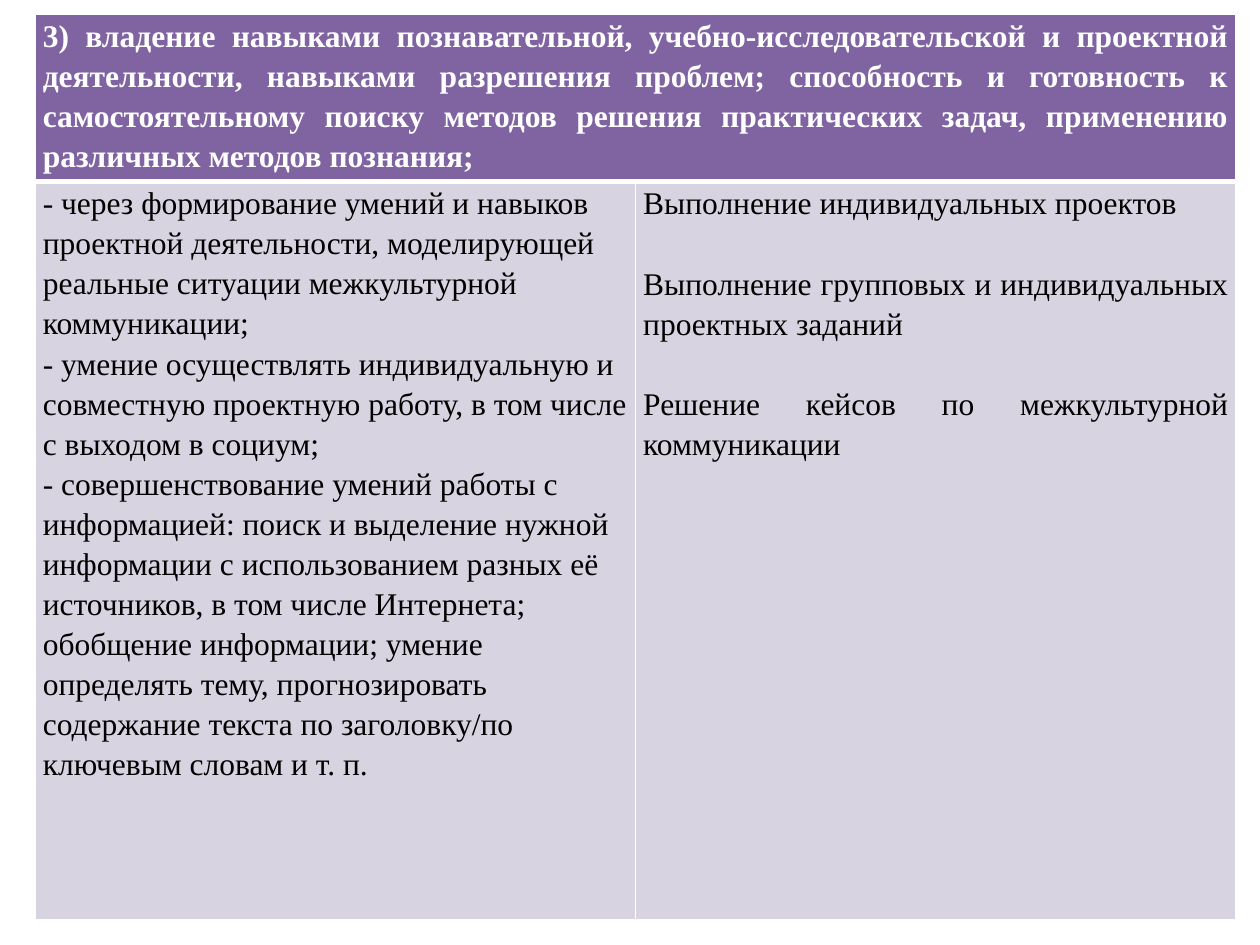
from lxml.etree import SubElement
from pptx import Presentation
from pptx.dml.color import RGBColor
from pptx.enum.text import PP_ALIGN
from pptx.oxml.ns import qn
from pptx.util import Inches, Pt

# Content
HEADER = [
    "3) владение навыками познавательной, учебно-исследовательской и проектной деятельности, "
    "навыками разрешения проблем; способность и готовность к самостоятельному поиску методов "
    "решения практических задач, применению различных методов познания;",
]
SKILLS = [
    "- через формирование умений и навыков проектной деятельности, моделирующей реальные "
    "ситуации межкультурной коммуникации;",
    "- умение осуществлять индивидуальную и совместную проектную работу, в том числе "
    "с выходом в социум;",
    "- совершенствование умений работы с информацией: поиск и выделение нужной информации "
    "с использованием разных её источников, в том числе Интернета; обобщение информации; "
    "умение определять тему, прогнозировать содержание текста по заголовку/по ключевым "
    "словам и т. п.",
]
ACTIVITIES = [
    "Выполнение индивидуальных проектов",
    "Выполнение групповых и индивидуальных проектных заданий",
    "Решение кейсов по межкультурной коммуникации",
]

# Style
FONT = "Times New Roman"
WHITE = RGBColor(0xFF, 0xFF, 0xFF)
BLACK = RGBColor(0x00, 0x00, 0x00)
PURPLE = RGBColor(0x80, 0x64, 0xA2)
LILAC = RGBColor(0xD8, 0xD3, 0xE0)
COLUMN_WIDTH = 4.765
ROW_HEIGHTS = (1.33, 5.86)


def set_borders(cell, top, bottom):
    """Draw white borders; widths are in points."""
    properties = cell._tc.get_or_add_tcPr()
    for side, width in (("L", 1), ("R", 1), ("T", top), ("B", bottom)):
        line = SubElement(properties, qn(f"a:ln{side}"), w=str(Pt(width)))
        fill = SubElement(line, qn("a:solidFill"))
        SubElement(fill, qn("a:srgbClr"), val=str(WHITE))


def fill_cell(cell, texts, fill, color, alignment, bold=False, gap=0):
    cell.fill.solid()
    cell.fill.fore_color.rgb = fill
    cell.margin_left = cell.margin_right = Inches(0.06)
    cell.margin_top = cell.margin_bottom = 0
    frame = cell.text_frame
    for index, text in enumerate(texts):
        paragraph = frame.add_paragraph() if index else frame.paragraphs[0]
        paragraph.alignment = alignment
        paragraph.line_spacing = 1.15
        paragraph.space_before = Pt(gap if index else 0)
        run = paragraph.add_run()
        run.text = text
        run.font.name = FONT
        run.font.size = Pt(18)
        run.font.bold = bold
        run.font.color.rgb = color


presentation = Presentation()
presentation.slide_width = Inches(10)
presentation.slide_height = Inches(7.5)
slide = presentation.slides.add_slide(presentation.slide_layouts[6])

# Table grid
table = slide.shapes.add_table(
    2, 2, Inches(0.28), Inches(0.11), Inches(2 * COLUMN_WIDTH), Inches(sum(ROW_HEIGHTS))
).table
for column in table.columns:
    column.width = Inches(COLUMN_WIDTH)
for row, height in zip(table.rows, ROW_HEIGHTS):
    row.height = Inches(height)
for column_index in range(2):
    set_borders(table.cell(0, column_index), top=1, bottom=3)
    set_borders(table.cell(1, column_index), top=3, bottom=1)

# Header across both columns, then the two body cells
table.cell(0, 0).merge(table.cell(0, 1))
fill_cell(table.cell(0, 0), HEADER, PURPLE, WHITE, PP_ALIGN.JUSTIFY, bold=True)
fill_cell(table.cell(1, 0), SKILLS, LILAC, BLACK, PP_ALIGN.LEFT)
fill_cell(table.cell(1, 1), ACTIVITIES, LILAC, BLACK, PP_ALIGN.JUSTIFY, gap=23)

presentation.save("out.pptx")
